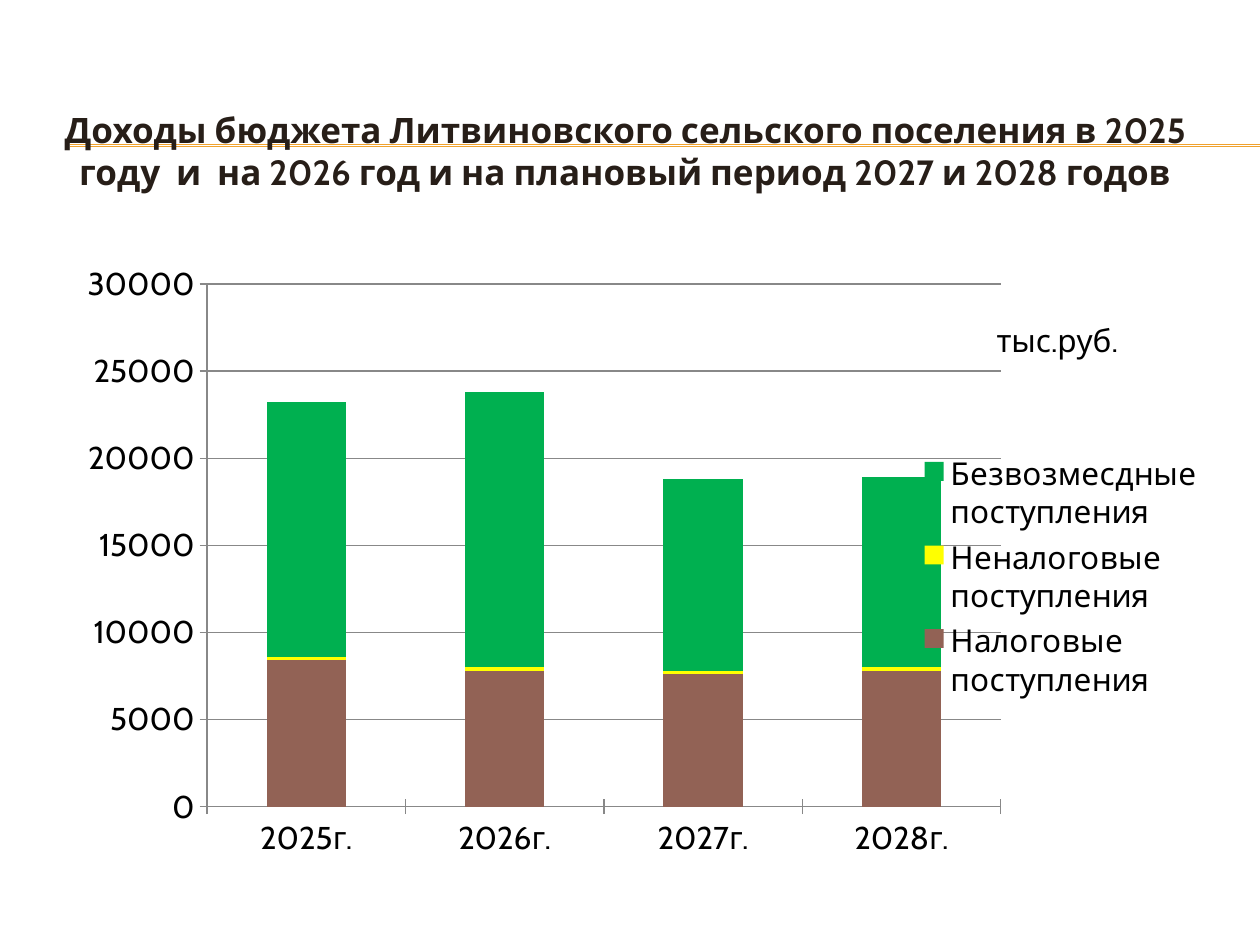
from lxml import etree
from pptx import Presentation
from pptx.chart.data import CategoryChartData
from pptx.dml.color import RGBColor
from pptx.enum.chart import XL_CHART_TYPE as ChartType, XL_LEGEND_POSITION as LegendPos, XL_TICK_MARK as Tick
from pptx.enum.shapes import MSO_CONNECTOR as Connector
from pptx.enum.text import MSO_ANCHOR as Anchor, MSO_AUTO_SIZE as AutoSize, PP_ALIGN as Align
from pptx.oxml import parse_xml
from pptx.oxml.ns import nsdecls, qn
from pptx.util import Cm, Pt

FONT = "Cabin"
ORANGE = RGBColor(0xF0, 0xA2, 0x2E)
DARK = RGBColor(0x27, 0x1E, 0x18)
BLACK = RGBColor(0, 0, 0)
GREY = RGBColor(0x88, 0x88, 0x88)
BROWN = RGBColor(0x92, 0x62, 0x55)
YELLOW = RGBColor(0xFF, 0xFF, 0x00)
GREEN = RGBColor(0x00, 0xB0, 0x50)


def add_label(left, top, width, height, text, size, color):
    """Add a one-paragraph text box and return its frame."""
    frame = slide.shapes.add_textbox(Cm(left), Cm(top), Cm(width), Cm(height)).text_frame
    frame.text = text
    font = frame.paragraphs[0].runs[0].font
    font.name, font.size = FONT, Pt(size)
    font.color.rgb = color
    return frame


def layout_xml(target, x, y, w, h):
    """Manual chart layout in fractions of the chart area."""
    return parse_xml(
        f'<c:layout {nsdecls("c")}><c:manualLayout>{target}'
        '<c:xMode val="edge"/><c:yMode val="edge"/>'
        f'<c:x val="{x}"/><c:y val="{y}"/><c:w val="{w}"/><c:h val="{h}"/>'
        '</c:manualLayout></c:layout>')


prs = Presentation()
prs.slide_width, prs.slide_height = Cm(25.4), Cm(19.05)
slide = prs.slides.add_slide(prs.slide_layouts[6])

# Double rule behind the title
for y in (2.92, 2.95):
    rule = slide.shapes.add_connector(Connector.STRAIGHT, Cm(1.42), Cm(y), Cm(25.4), Cm(y))
    rule.line.color.rgb = ORANGE
    rule.line.width = Pt(0.75)
    etree.SubElement(rule._element.spPr, qn("a:effectLst"))

title = add_label(
    0.5, 0.74, 24.2, 4.57,
    "Доходы бюджета Литвиновского сельского поселения в 2025 году  и  "
    "на 2026 год и на плановый период 2027 и 2028 годов", 20, DARK)
title.word_wrap = True
title.vertical_anchor = Anchor.MIDDLE
title.paragraphs[0].alignment = Align.CENTER
title.paragraphs[0].runs[0].font.bold = True

# Stacked revenue chart
revenues = [
    ("Налоговые поступления", (8400, 7800, 7600, 7800), BROWN),
    ("Неналоговые поступления", (200, 200, 200, 200), YELLOW),
    ("Безвозмесдные поступления", (14600, 15800, 11000, 10900), GREEN),
]
data = CategoryChartData()
data.categories = ["2025г.", "2026г.", "2027г.", "2028г."]
for name, values, _ in revenues:
    data.add_series(name, values)
chart = slide.shapes.add_chart(
    ChartType.COLUMN_STACKED, Cm(1.5), Cm(4.52), Cm(22.86), Cm(13.69), data).chart
chart.has_title = False
chart.font.name, chart.font.size = FONT, Pt(18)
chart.font.color.rgb = BLACK

plot = chart.plots[0]
plot.gap_width, plot.overlap = 150, 100
plot.vary_by_categories = False
for series, (_, _, color) in zip(plot.series, revenues):
    series.format.fill.solid()
    series.format.fill.fore_color.rgb = color

for axis in (chart.category_axis, chart.value_axis):
    axis.major_tick_mark = Tick.CROSS
    axis.minor_tick_mark = Tick.NONE
    axis.format.line.color.rgb = GREY
amounts = chart.value_axis
amounts.minimum_scale, amounts.maximum_scale, amounts.major_unit = 0, 30000, 5000
amounts.has_major_gridlines = True
amounts.major_gridlines.format.line.color.rgb = GREY

chart.has_legend = True
legend = chart.legend
legend.position = LegendPos.RIGHT
legend.include_in_layout = False
legend_xml = legend._element
for old in legend_xml.findall(qn("c:layout")):
    legend_xml.remove(old)
legend_xml.find(qn("c:legendPos")).addnext(layout_xml("", 0.74, 0.33, 0.26, 0.38))

plot_area = chart._chartSpace.chart.plotArea
for old in plot_area.findall(qn("c:layout")):
    plot_area.remove(old)
plot_area.insert(0, layout_xml('<c:layoutTarget val="inner"/>', 0.117, 0.088, 0.7, 0.77))

unit = add_label(19.84, 6.35, 4.17, 1.02, "тыс.руб.", 18, BLACK)
unit.word_wrap = True
unit.auto_size = AutoSize.SHAPE_TO_FIT_TEXT

prs.save("out.pptx")
